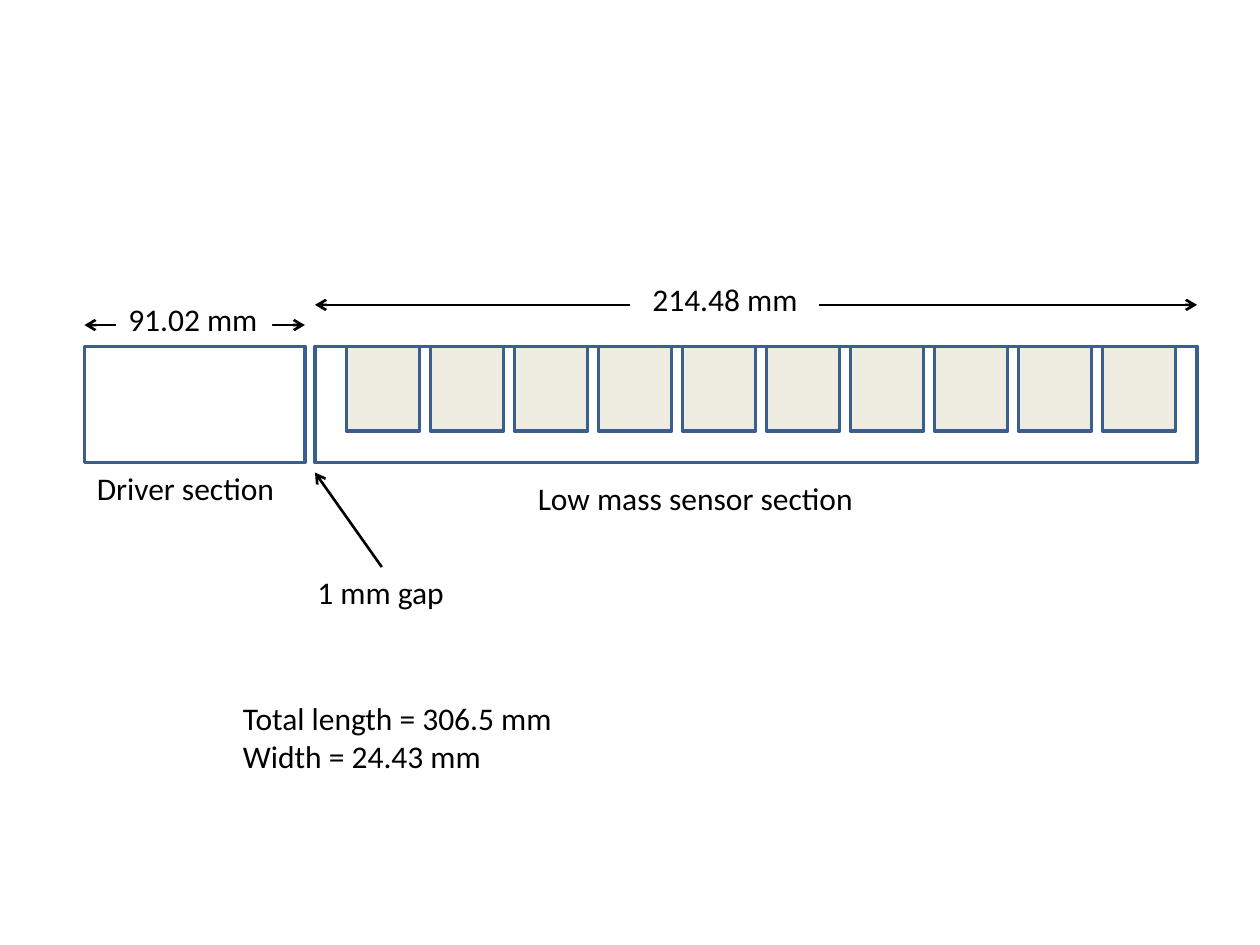
"""Build a dimensioned sketch of a driver section and a low mass sensor section."""
import lxml.etree
import pptx
import pptx.dml.color
import pptx.enum.shapes
import pptx.enum.text
import pptx.oxml.ns
import pptx.util

Inches = pptx.util.Inches
RGBColor = pptx.dml.color.RGBColor
BLACK = RGBColor(0x00, 0x00, 0x00)
WHITE = RGBColor(0xFF, 0xFF, 0xFF)
OUTLINE = RGBColor(0x3A, 0x5F, 0x8C)
SENSOR = RGBColor(0xEE, 0xEC, 0xE1)

SECTION_TOP = 2.75
SECTION_HEIGHT = 0.92
SENSOR_COUNT = 10
SENSOR_PITCH = 2 / 3


def add_block(page, left, width, height, fill=None):
    box = page.shapes.add_shape(
        pptx.enum.shapes.MSO_SHAPE.RECTANGLE,
        Inches(left), Inches(SECTION_TOP), Inches(width), Inches(height))
    box.shadow.inherit = False
    if fill is None:
        box.fill.background()
    else:
        box.fill.solid()
        box.fill.fore_color.rgb = fill
    box.line.color.rgb = OUTLINE
    box.line.width = pptx.util.Pt(2)


def add_label(page, text, left, top, width, height=0.4, size=18, fill=None):
    box = page.shapes.add_textbox(
        Inches(left), Inches(top), Inches(width), Inches(height))
    if fill is not None:
        box.fill.solid()
        box.fill.fore_color.rgb = fill
    frame = box.text_frame
    frame.word_wrap = False
    frame.auto_size = pptx.enum.text.MSO_AUTO_SIZE.SHAPE_TO_FIT_TEXT
    for index, line in enumerate(text.split("\n")):
        para = frame.add_paragraph() if index else frame.paragraphs[0]
        span = para.add_run()
        span.text = line
        span.font.name = "Calibri"
        span.font.size = pptx.util.Pt(size)
        span.font.color.rgb = BLACK


def add_arrow(page, start, end, ends=("tailEnd",)):
    arrow = page.shapes.add_connector(
        pptx.enum.shapes.MSO_CONNECTOR.STRAIGHT,
        *(Inches(value) for value in (*start, *end)))
    arrow.line.color.rgb = BLACK
    arrow.line.width = pptx.util.Pt(1.5)
    properties = arrow._element.spPr
    outline = properties.find(pptx.oxml.ns.qn("a:ln"))
    for name in ends:
        lxml.etree.SubElement(
            outline, pptx.oxml.ns.qn("a:" + name), type="arrow")
    lxml.etree.SubElement(properties, pptx.oxml.ns.qn("a:effectLst"))


def main():
    deck = pptx.Presentation()
    deck.slide_width = Inches(10)
    deck.slide_height = Inches(7.5)
    page = deck.slides.add_slide(deck.slide_layouts[6])

    add_block(page, 2.5, 7, SECTION_HEIGHT)
    add_block(page, 0.67, 1.75, SECTION_HEIGHT)
    for index in reversed(range(SENSOR_COUNT)):
        add_block(page, 2.75 + index * SENSOR_PITCH, 0.58, 0.67, fill=SENSOR)

    add_label(page, "214.48 mm", 5.08, 2.17, 1.37)
    add_arrow(page, (6.5, 2.42), (9.5, 2.42))
    add_arrow(page, (5, 2.42), (2.5, 2.42))

    add_label(page, "1 mm gap", 2.42, 4.5, 1.22)
    add_label(page, "Low mass sensor section", 4.17, 3.75, 2.73)
    add_label(page, "Driver section", 0.67, 3.67, 1.63)

    add_arrow(page, (2.42, 2.58), (0.67, 2.58), ends=("headEnd", "tailEnd"))
    add_label(page, "91.02 mm", 0.92, 2.33, 1.24, fill=WHITE)
    add_arrow(page, (3.03, 4.5), (2.5, 3.75))

    add_label(page, "Total length = 306.5 mm\nWidth = 24.43 mm",
              1.83, 5.5, 2.68, height=0.71)
    deck.save("out.pptx")


if __name__ == "__main__":
    main()
